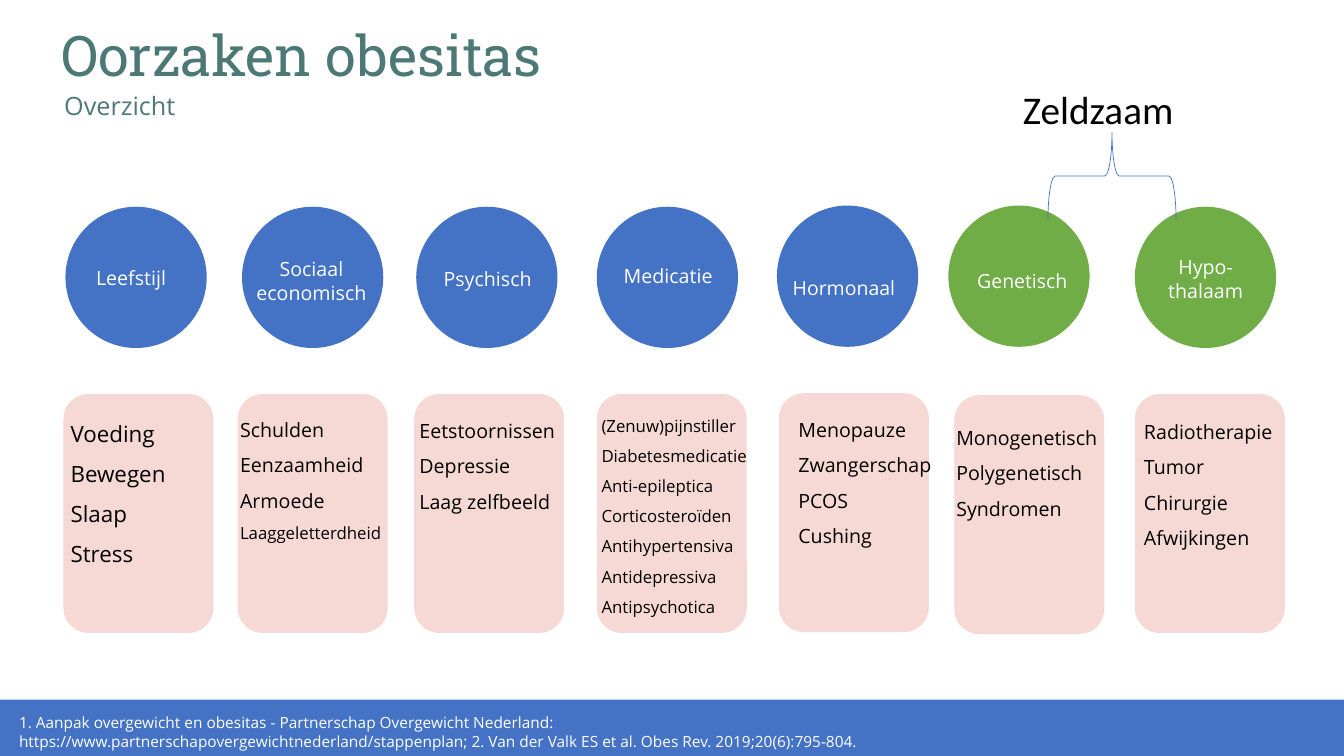
from collections import namedtuple

from lxml import etree
from pptx import Presentation
from pptx.dml.color import RGBColor
from pptx.enum.shapes import MSO_SHAPE
from pptx.enum.text import MSO_ANCHOR, MSO_AUTO_SIZE, PP_ALIGN
from pptx.oxml.ns import qn
from pptx.util import Cm, Pt

OVAL = MSO_SHAPE.OVAL
CARD = MSO_SHAPE.ROUNDED_RECTANGLE
RECT = MSO_SHAPE.RECTANGLE
BRACE = MSO_SHAPE.RIGHT_BRACE
LEFT, CENTER = PP_ALIGN.LEFT, PP_ALIGN.CENTER
TOP = MSO_ANCHOR.TOP
FIT, NO_FIT = MSO_AUTO_SIZE.SHAPE_TO_FIT_TEXT, MSO_AUTO_SIZE.NONE

BLUE, GREEN, RED = "4472C4", "70AD47", "D4412C"
TEAL, WHITE, BLACK = "4C7875", "FFFFFF", "000000"
BODY, HEADING = "Open Sans", "Roboto Slab"
CIRCLE, CARD_W, CARD_H = 3.56, 3.78, 6.02

Cause = namedtuple("Cause", "color circle label label_at raised card items items_at size")
CAUSES = [
    Cause(BLUE, (1.65, 5.21), ["Leefstijl"], (2.16, 6.58, 2.29), False, (1.6, 9.93),
          ["Voeding", "Bewegen", "Slaap", "Stress"], (1.78, 10.24, 2.49), 16),
    Cause(BLUE, (6.1, 5.21), ["Sociaal", "economisch"], (6.2, 6.35, 3.3), False, (5.99, 9.93),
          ["Schulden", "Eenzaamheid", "Armoede", ("Laaggeletterdheid", 12)],
          (6.05, 10.24, 3.61), 14),
    Cause(BLUE, (10.49, 5.21), ["Psychisch"], (10.92, 6.6, 2.74), False, (10.44, 9.93),
          ["Eetstoornissen", "Depressie", "Laag zelfbeeld"], (10.57, 10.26, 3.43), 14),
    Cause(BLUE, (15.04, 5.21), ["Medicatie"], (15.34, 6.53, 3), False, (15.04, 9.93),
          ["(Zenuw)pijnstiller", "Diabetesmedicatie", "Anti-epileptica", "Corticosteroïden",
           "Antihypertensiva", "Antidepressiva", "Antipsychotica"], (15.16, 10.21, 3.71), 12),
    Cause(BLUE, (19.58, 5.18), ["Hormonaal"], (19.38, 6.73, 3.78), True, (19.63, 9.91),
          ["Menopauze", "Zwangerschap", "PCOS", "Cushing"], (20.12, 10.24, 3.38), 14),
    Cause(GREEN, (23.9, 5.18), ["Genetisch"], (24.1, 6.55, 3.33), True, (24.05, 9.96),
          ["Monogenetisch", "Polygenetisch", "Syndromen"], (24.1, 10.44, 3.61), 14),
    Cause(GREEN, (28.6, 5.21), ["Hypo-", "thalaam"], (29.18, 6.3, 2.41), False, (28.6, 9.93),
          ["Radiotherapie", "Tumor", "Chirurgie", "Afwijkingen"], (28.83, 10.29, 3.28), 14),
]
SOURCES = ("1. Aanpak overgewicht en obesitas - Partnerschap Overgewicht Nederland: "
           "https://www.partnerschapovergewichtnederland/stappenplan; "
           "2. Van der Valk ES et al. Obes Rev. 2019;20(6):795-804.")


def rgb(color):
    """Turn a hex string into a colour."""
    return RGBColor.from_string(color)


def add_run(p, text, size, color, font=BODY, raised=False):
    """Add one formatted run to a paragraph."""
    r = p.add_run()
    r.text = text
    r.font.size = Pt(size)
    r.font.name = font
    r.font.color.rgb = rgb(color)
    if raised:
        r.font._element.set("baseline", "30000")


def add_text(s, box, lines, size, color, font=BODY, align=LEFT, spacing=1.0,
             inset=None, wrap=True, raised=False):
    """Add a text box; a line is a string or a (string, size) pair."""
    tb = s.shapes.add_textbox(*[Cm(v) for v in box])
    tf = tb.text_frame
    tf.word_wrap = wrap
    tf.auto_size = FIT
    if inset is not None:
        tf.margin_left = tf.margin_right = tf.margin_top = tf.margin_bottom = Cm(inset)
    for i, line in enumerate(lines):
        text, line_size = line if isinstance(line, tuple) else (line, size)
        p = tf.add_paragraph() if i else tf.paragraphs[0]
        p.alignment = align
        p.line_spacing = spacing
        add_run(p, text, line_size, color, font, raised)


def add_shape(s, kind, box, fill, opacity=100):
    """Add a filled shape without outline."""
    sp = s.shapes.add_shape(kind, *[Cm(v) for v in box])
    sp.shadow.inherit = False
    sp.line.fill.background()
    sp.fill.solid()
    sp.fill.fore_color.rgb = rgb(fill)
    if opacity < 100:
        clr = sp._element.spPr.find(".//" + qn("a:srgbClr"))
        etree.SubElement(clr, qn("a:alpha")).set("val", str(opacity * 1000))


def add_brace(s, box, color):
    """Add a thin brace with its tip pointing up."""
    sp = s.shapes.add_shape(BRACE, *[Cm(v) for v in box])
    sp.shadow.inherit = False
    sp.rotation = 270
    sp.fill.background()
    sp.line.color.rgb = rgb(color)
    sp.line.width = Pt(0.5)


def set_title(s, box, text):
    """Place and format the title placeholder."""
    sp = s.shapes.title
    sp.left, sp.top, sp.width, sp.height = [Cm(v) for v in box]
    tf = sp.text_frame
    tf.auto_size = NO_FIT
    tf.vertical_anchor = TOP
    p = tf.paragraphs[0]
    p.alignment = LEFT
    add_run(p, text, 40, TEAL, HEADING)


def add_cause(s, cause):
    """Add one column: a labelled circle above a card with a list."""
    add_shape(s, OVAL, (*cause.circle, CIRCLE, CIRCLE), cause.color)
    add_text(s, (*cause.label_at, 0.87 * len(cause.label)), cause.label,
             24 if cause.raised else 14, WHITE, align=CENTER,
             wrap=cause.raised, raised=cause.raised)
    add_shape(s, CARD, (*cause.card, CARD_W, CARD_H), RED, opacity=20)
    height = round(0.07 * cause.size * len(cause.items), 2)
    add_text(s, (*cause.items_at, height), cause.items, cause.size, BLACK,
             spacing=1.5, inset=0, wrap=False)


def main():
    """Build the slide and save it."""
    prs = Presentation()
    prs.slide_width, prs.slide_height = Cm(33.87), Cm(19.05)
    s = prs.slides.add_slide(prs.slide_layouts[5])
    set_title(s, (1.3, 0.38, 29.79, 1.96), "Oorzaken obesitas")
    add_text(s, (1.37, 2.16, 30.05, 1.02), ["Overzicht"], 18, TEAL)
    for cause in CAUSES:
        add_cause(s, cause)
    add_shape(s, RECT, (0, 17.63, 33.87, 1.42), BLUE)
    add_text(s, (0.48, 17.98, 23.4, 0.94), [SOURCES], 11, WHITE, inset=0)
    add_text(s, (25.53, 2.03, 6.17, 1.45), ["Zeldzaam"], 28, BLACK, "Calibri")
    add_brace(s, (26.92, 2.82, 2.21, 3.23), BLUE)
    prs.save("out.pptx")


if __name__ == "__main__":
    main()
